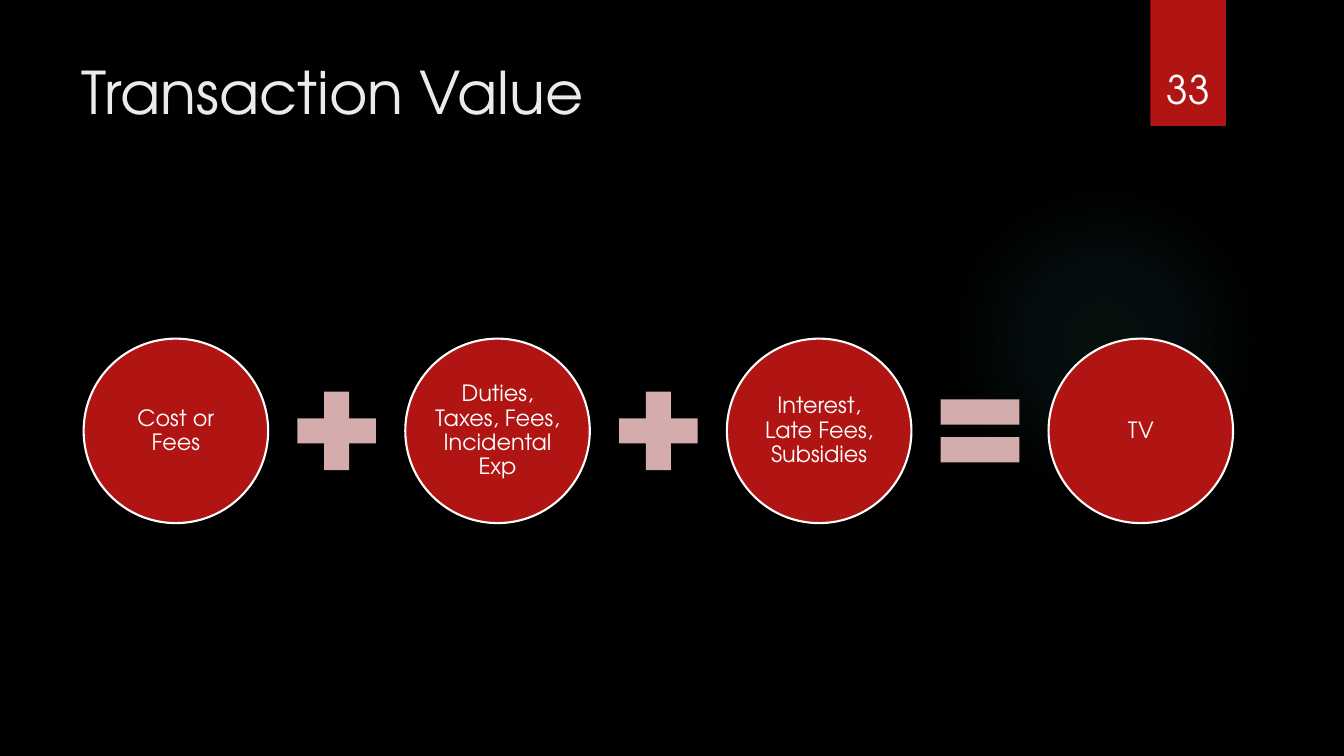
from lxml.etree import SubElement
from pptx import Presentation
from pptx.dml.color import RGBColor
from pptx.enum.shapes import MSO_SHAPE
from pptx.enum.text import MSO_ANCHOR, PP_ALIGN
from pptx.oxml.ns import qn
from pptx.util import Inches, Pt

FONT = "TeX Gyre Adventor"
RED, PINK, WHITE = "B01513", "D4ACAB", "FFFFFF"
TERMS = [
    "Cost or Fees",
    "Duties, Taxes, Fees, Incidental Exp",
    "Interest, Late Fees, Subsidies",
    "TV",
]
OPERATORS = [MSO_SHAPE.MATH_PLUS, MSO_SHAPE.MATH_PLUS, MSO_SHAPE.MATH_EQUAL]


def color(value):
    """Turn a hex string into a colour."""
    return RGBColor.from_string(value)


def add_plain_shape(slide, kind, left, top, width, height, fill, line=None):
    """Add a flat preset shape, outlined only when a line colour is given."""
    shape = slide.shapes.add_shape(
        kind, Inches(left), Inches(top), Inches(width), Inches(height))
    shape.shadow.inherit = False
    shape.fill.solid()
    shape.fill.fore_color.rgb = color(fill)
    if line:
        shape.line.color.rgb = color(line)
        shape.line.width = Pt(1.5)
    else:
        shape.line.fill.background()
    return shape


def write_text(shape, text, size, text_color, alignment, anchor, margins):
    """Write one paragraph with margins given as left, top, right, bottom."""
    frame = shape.text_frame
    frame.word_wrap = True
    frame.vertical_anchor = anchor
    (frame.margin_left, frame.margin_top,
     frame.margin_right, frame.margin_bottom) = map(Inches, margins)
    paragraph = frame.paragraphs[0]
    paragraph.text = text
    paragraph.alignment = alignment
    paragraph.font.name = FONT
    paragraph.font.size = Pt(size)
    paragraph.font.color.rgb = color(text_color)
    return paragraph


def add_glow(slide, left, top, size):
    """Add a faint round glow that fades out towards its edge."""
    glow = add_plain_shape(
        slide, MSO_SHAPE.OVAL, left, top, size, size, "50B9C1")
    glow.fill.gradient()
    gradient = glow._element.spPr.find(qn("a:gradFill"))
    for child in list(gradient):
        gradient.remove(child)
    stops = SubElement(gradient, qn("a:gsLst"))
    for position, opacity in [(0, 7), (36, 6), (69, 0)]:
        stop = SubElement(stops, qn("a:gs"), pos=str(position * 1000))
        tint = SubElement(stop, qn("a:srgbClr"), val="50B9C1")
        SubElement(tint, qn("a:alpha"), val=str(opacity * 1000))
    circle = SubElement(gradient, qn("a:path"), path="circle")
    SubElement(circle, qn("a:fillToRect"),
               l="50000", t="50000", r="50000", b="50000")


def add_title(slide, left, top, width, height):
    """Add the slide title."""
    box = slide.shapes.add_textbox(
        Inches(left), Inches(top), Inches(width), Inches(height))
    write_text(box, "Transaction Value", 42, "EBEBEB", PP_ALIGN.LEFT,
               MSO_ANCHOR.TOP, (0.1, 0.05, 0.1, 0.05))


def add_page_ribbon(slide, left, top, width, height):
    """Add the red ribbon that carries the page number."""
    ribbon = add_plain_shape(
        slide, MSO_SHAPE.RECTANGLE, left, top, width, height, RED)
    write_text(ribbon, "33", 28, WHITE, PP_ALIGN.CENTER,
               MSO_ANCHOR.BOTTOM, (0, 0, 0, 0.14))


def add_equation(slide, left, top, width, height):
    """Spread the terms over the width, with an operator in each gap."""
    pitch = (width - height) / (len(TERMS) - 1)
    operator_size = 1.06
    operator_left = left + (height + pitch - operator_size) / 2
    operator_top = top + (height - operator_size) / 2
    for index, term in enumerate(TERMS):
        circle = add_plain_shape(slide, MSO_SHAPE.OVAL, left + index * pitch,
                                 top, height, height, RED, WHITE)
        paragraph = write_text(circle, term, 16, WHITE, PP_ALIGN.CENTER,
                               MSO_ANCHOR.MIDDLE, (0.02,) * 4)
        paragraph.line_spacing = 0.9
    for index, operator in enumerate(OPERATORS):
        add_plain_shape(slide, operator, operator_left + index * pitch,
                        operator_top, operator_size, operator_size, PINK)


def main():
    """Build the slide and save it."""
    presentation = Presentation()
    presentation.slide_width = Inches(13.33)
    presentation.slide_height = Inches(7.5)
    slide = presentation.slides.add_slide(presentation.slide_layouts[6])
    slide.background.fill.solid()
    slide.background.fill.fore_color.rgb = color("000000")
    add_glow(slide, 9.41, 1.83, 3.08)
    add_page_ribbon(slide, 11.41, 0, 0.75, 1.25)
    add_title(slide, 0.71, 0.5, 10.29, 1.53)
    add_equation(slide, 0.83, 3.36, 11.4, 1.83)
    presentation.save("out.pptx")


if __name__ == "__main__":
    main()
